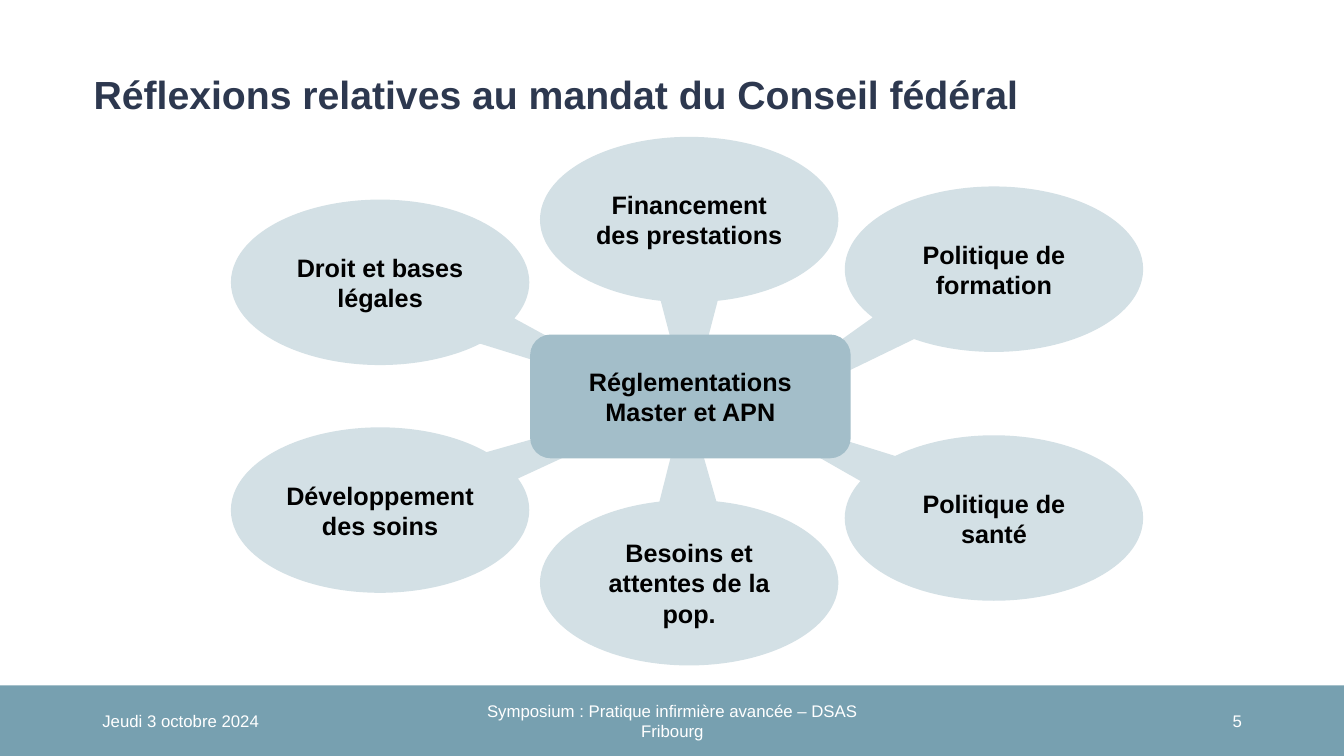
from pptx import Presentation
from pptx.dml.color import RGBColor
from pptx.enum.shapes import MSO_SHAPE
from pptx.enum.text import MSO_ANCHOR, PP_ALIGN
from pptx.util import Cm, Pt

COLORS = {
    "title": "2D384F",
    "bar": "77A0B0",
    "bubble": "D3E0E5",
    "center": "A3BEC9",
    "black": "000000",
    "white": "FFFFFF",
}
FONT = "Arial"

BUBBLE_WIDTH, BUBBLE_HEIGHT = 7.52, 4.17
LEFT_COLUMN, MIDDLE_COLUMN, RIGHT_COLUMN = 5.82, 13.61, 21.29

# Text, left, top, pointer tip relative to the bubble's centre
BUBBLES = [
    ("Financement des prestations", MIDDLE_COLUMN, 3.45, (0, 1.15)),
    ("Développement des soins", LEFT_COLUMN, 10.77, (1.12, -0.74)),
    ("Droit et bases légales", LEFT_COLUMN, 5.03, (0.96, 0.72)),
    ("Politique de formation", RIGHT_COLUMN, 4.7, (-1.02, 1.08)),
    ("Politique de santé", RIGHT_COLUMN, 10.97, (-0.91, -0.7)),
    ("Besoins et attentes de la pop.", MIDDLE_COLUMN, 12.6, (-0.01, -1.13)),
]

# Text, left, width, alignment
FOOTERS = [
    ("Jeudi 3 octobre 2024", 2.33, 7.62, PP_ALIGN.LEFT),
    ("Symposium : Pratique infirmière avancée – DSAS Fribourg",
     11.23, 11.43, PP_ALIGN.CENTER),
    ("5", 23.93, 7.62, PP_ALIGN.RIGHT),
]


def write_text(shape, text, size, color, alignment, bold=False,
               anchor=MSO_ANCHOR.MIDDLE):
    frame = shape.text_frame
    frame.word_wrap = True
    frame.vertical_anchor = anchor
    paragraph = frame.paragraphs[0]
    paragraph.alignment = alignment
    run = paragraph.add_run()
    run.text = text
    run.font.name = FONT
    run.font.size = Pt(size)
    run.font.bold = bold
    run.font.color.rgb = RGBColor.from_string(COLORS[color])
    return paragraph


def add_filled_shape(shapes, kind, left, top, width, height, color):
    shape = shapes.add_shape(kind, Cm(left), Cm(top), Cm(width), Cm(height))
    shape.shadow.inherit = False
    shape.fill.solid()
    shape.fill.fore_color.rgb = RGBColor.from_string(COLORS[color])
    shape.line.fill.background()
    return shape


def add_title(slide, text):
    box = slide.shapes.add_textbox(Cm(2.11), Cm(1.78), Cm(29.97), Cm(1.07))
    paragraph = write_text(box, text, 28, "title", PP_ALIGN.LEFT,
                           bold=True, anchor=MSO_ANCHOR.TOP)
    paragraph.line_spacing = 0.9


def add_footer(slide):
    add_filled_shape(slide.shapes, MSO_SHAPE.RECTANGLE,
                     0, 17.27, 33.87, 1.78, "bar")
    for text, left, width, alignment in FOOTERS:
        box = slide.shapes.add_textbox(Cm(left), Cm(17.65), Cm(width), Cm(1.02))
        write_text(box, text, 12, "white", alignment)


def add_bubble(shapes, text, left, top, tip):
    bubble = add_filled_shape(shapes, MSO_SHAPE.OVAL_CALLOUT, left, top,
                              BUBBLE_WIDTH, BUBBLE_HEIGHT, "bubble")
    bubble.adjustments[0], bubble.adjustments[1] = tip
    write_text(bubble, text, 18, "black", PP_ALIGN.CENTER, bold=True)


def add_diagram(slide):
    shapes = slide.shapes.add_group_shape().shapes
    for bubble in BUBBLES:
        add_bubble(shapes, *bubble)
    # The central box covers the pointer tips
    center = add_filled_shape(shapes, MSO_SHAPE.ROUNDED_RECTANGLE,
                              13.36, 8.43, 8.08, 3.12, "center")
    write_text(center, "Réglementations Master et APN", 18, "black",
               PP_ALIGN.CENTER, bold=True)


def main():
    presentation = Presentation()
    presentation.slide_width = Cm(33.87)
    presentation.slide_height = Cm(19.05)
    slide = presentation.slides.add_slide(presentation.slide_layouts[6])

    add_footer(slide)
    add_title(slide, "Réflexions relatives au mandat du Conseil fédéral")
    add_diagram(slide)

    presentation.save("out.pptx")


if __name__ == "__main__":
    main()
